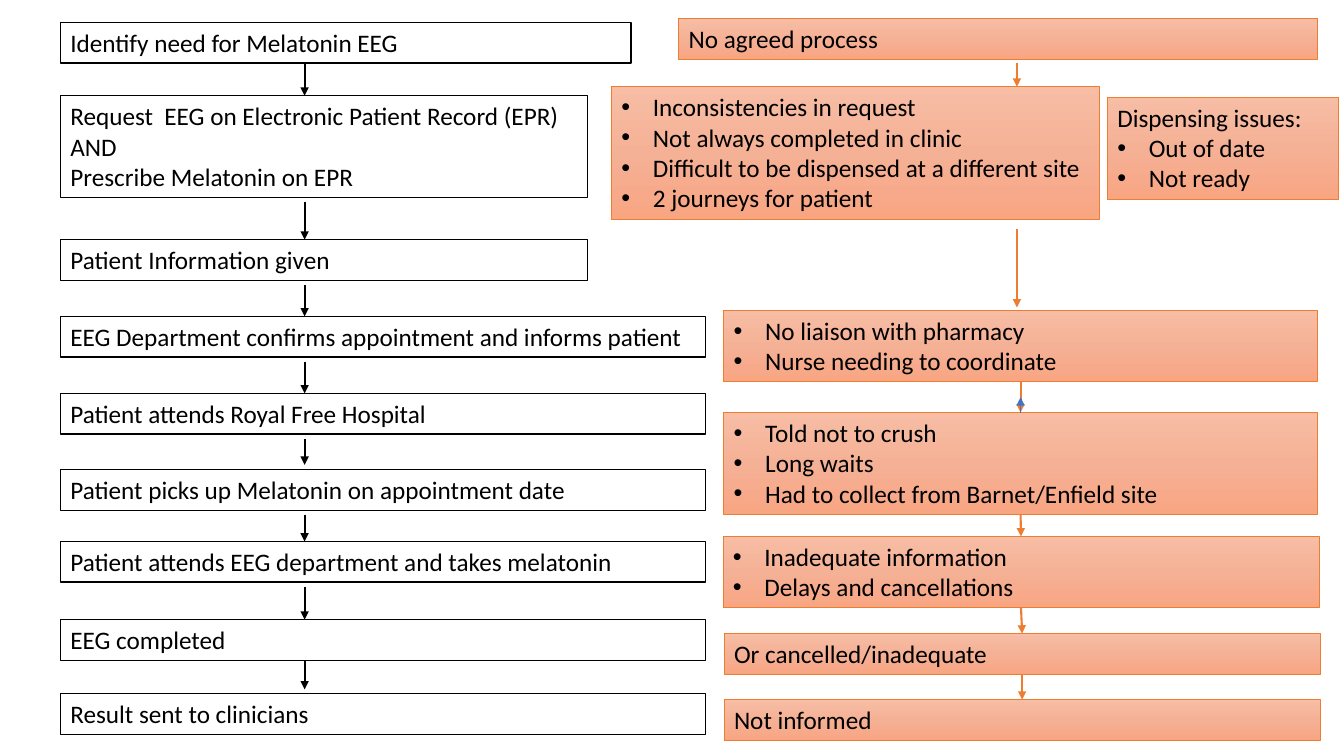
from lxml import etree
from pptx import Presentation
from pptx.dml.color import RGBColor
from pptx.enum.shapes import MSO_CONNECTOR, MSO_SHAPE
from pptx.enum.text import MSO_ANCHOR, MSO_AUTO_SIZE, PP_ALIGN
from pptx.oxml.ns import qn
from pptx.util import Pt

RECTANGLE = MSO_SHAPE.RECTANGLE
STRAIGHT = MSO_CONNECTOR.STRAIGHT
LEFT = PP_ALIGN.LEFT
TOP = MSO_ANCHOR.TOP
GROW = MSO_AUTO_SIZE.SHAPE_TO_FIT_TEXT
TOP_SIDE, BOTTOM_SIDE = 0, 2

BLACK, WHITE, ORANGE, BLUE = "000000", "FFFFFF", "ED7D31", "4472C4"
PEACH = ("F7BDA5", "F5B196", "F8A582")
LINE_HEIGHT, PADDING = 21.8, 7.28


def color(value):
    return RGBColor.from_string(value)


def write(frame, text, *, size=18, font="Calibri", ink=BLACK, indent=22.5):
    """Write one paragraph per line; lines that start with • become bullets."""
    for number, line in enumerate(text.split("\n")):
        para = frame.paragraphs[0] if number == 0 else frame.add_paragraph()
        para.alignment = LEFT
        if line.startswith("•"):
            props = para._p.get_or_add_pPr()
            props.set("marL", str(Pt(indent)))
            props.set("indent", str(-Pt(indent)))
            etree.SubElement(props, qn("a:buFont")).set("typeface", "Arial")
            etree.SubElement(props, qn("a:buChar")).set("char", "•")
        span = para.add_run()
        span.text = line.lstrip("•")
        span.font.size = Pt(size)
        span.font.name = font
        span.font.color.rgb = color(ink)


class FlowPage:
    def __init__(self, page):
        self.page = page

    def box(self, text, left, top, width):
        lines = text.count("\n") + 1
        box = self.page.shapes.add_shape(
            RECTANGLE, Pt(left), Pt(top), Pt(width), Pt(PADDING + LINE_HEIGHT * lines))
        box.shadow.inherit = False
        frame = box.text_frame
        frame.word_wrap = True
        frame.auto_size = GROW
        frame.vertical_anchor = TOP
        write(frame, text)
        return box

    def step(self, text, top, width):
        box = self.box(text, 43.2, top, width)
        box.fill.solid()
        box.fill.fore_color.rgb = color(WHITE)
        box.line.color.rgb = color(BLACK)
        box.line.width = Pt(1)
        return box

    def problem(self, text, left, top, width):
        box = self.box(text, left, top, width)
        box.fill.gradient()
        box.fill.gradient_angle = 270
        stops = box.fill.gradient_stops
        stops[0].color.rgb = color(PEACH[0])
        stops[1].color.rgb = color(PEACH[2])
        # The middle stop of the gradient
        stop_list = box._element.spPr.find(qn("a:gradFill")).find(qn("a:gsLst"))
        middle = etree.Element(qn("a:gs"), pos="50000")
        etree.SubElement(middle, qn("a:srgbClr")).set("val", PEACH[1])
        stop_list.insert(1, middle)
        box.line.color.rgb = color(ORANGE)
        box.line.width = Pt(0.5)
        return box

    def arrow(self, x, start, end, ink, width=1.5, source=None, target=None):
        """Draw a vertical arrow; source and target are (box, side) pairs."""
        arrow = self.page.shapes.add_connector(
            STRAIGHT, Pt(x), Pt(start), Pt(x), Pt(end))
        if source:
            arrow.begin_connect(*source)
        if target:
            arrow.end_connect(*target)
        arrow.line.color.rgb = color(ink)
        arrow.line.width = Pt(width)
        outline = arrow.line._get_or_add_ln()
        etree.SubElement(outline, qn("a:tailEnd")).set("type", "triangle")
        etree.SubElement(arrow._element.spPr, qn("a:effectLst"))
        return arrow


# Text, top and width of each step, then the gaps around the arrow below it
STEPS = [
    ("Identify need for Melatonin EEG", 16, 407.5, 0, 0),
    ("Request  EEG on Electronic Patient Record (EPR)\nAND\nPrescribe Melatonin on EPR",
     68.4, 376.5, 3.5, 0),
    ("Patient Information given", 171.2, 376.5, 3.5, 0),
    ("EEG Department confirms appointment and informs patient", 226, 460.8, 3.5, 0),
    ("Patient attends Royal Free Hospital", 281, 460.8, 3.5, 3.5),
    ("Patient picks up Melatonin on appointment date", 335.5, 460.8, 3, 0),
    ("Patient attends EEG department and takes melatonin", 386.8, 460.8, 3.5, 0),
    ("EEG completed", 442.6, 460.8, 0, 3),
    ("Result sent to clinicians", 495.5, 460.8, 0, 0),
]

# Problems joined in a chain: text, left, top and width
CHAIN = [
    ("•No liaison with pharmacy\n•Nurse needing to coordinate", 517, 221.8, 424),
    ("•Told not to crush\n•Long waits\n•Had to collect from Barnet/Enfield site",
     517, 294.7, 424),
    ("•Inadequate information\n•Delays and cancellations", 516.4, 383.2, 425.8),
    ("Or cancelled/inadequate", 517.2, 452.6, 425.8),
    ("Not informed", 517.2, 499.8, 425.8),
]


def main():
    deck = Presentation()
    deck.slide_width, deck.slide_height = Pt(960), Pt(540)
    page = deck.slides.add_slide(deck.slide_layouts[6])
    flow = FlowPage(page)

    # Patient pathway on the left
    steps = [flow.step(*entry[:3]) for entry in STEPS]
    for entry, upper, lower in zip(STEPS, steps, steps[1:]):
        gap_above, gap_below = entry[3:]
        bottom = upper.top.pt + upper.height.pt
        flow.arrow(217.6, bottom + gap_above, lower.top.pt - gap_below, BLACK)

    # Problems at the start of the pathway
    flow.problem("No agreed process", 484.8, 13.3, 456.3)
    flow.problem("•Inconsistencies in request\n•Not always completed in clinic\n"
                 "•Difficult to be dispensed at a different site\n•2 journeys for patient",
                 436.8, 62, 348.5)
    flow.problem("Dispensing issues:\n•Out of date\n•Not ready", 791, 69.5, 165)
    flow.arrow(726.4, 45, 62, ORANGE)
    flow.arrow(726.4, 163.6, 219.6, ORANGE)

    # Chain of later problems
    chain = [flow.problem(*entry) for entry in CHAIN]
    for upper, lower in zip(chain, chain[1:]):
        flow.arrow(729, 0, 0, ORANGE,
                   source=(upper, BOTTOM_SIDE), target=(lower, TOP_SIDE))
    flow.arrow(729, 294.7, 283.7, BLUE, width=0.5, source=(chain[1], TOP_SIDE))

    deck.save("out.pptx")


if __name__ == "__main__":
    main()
